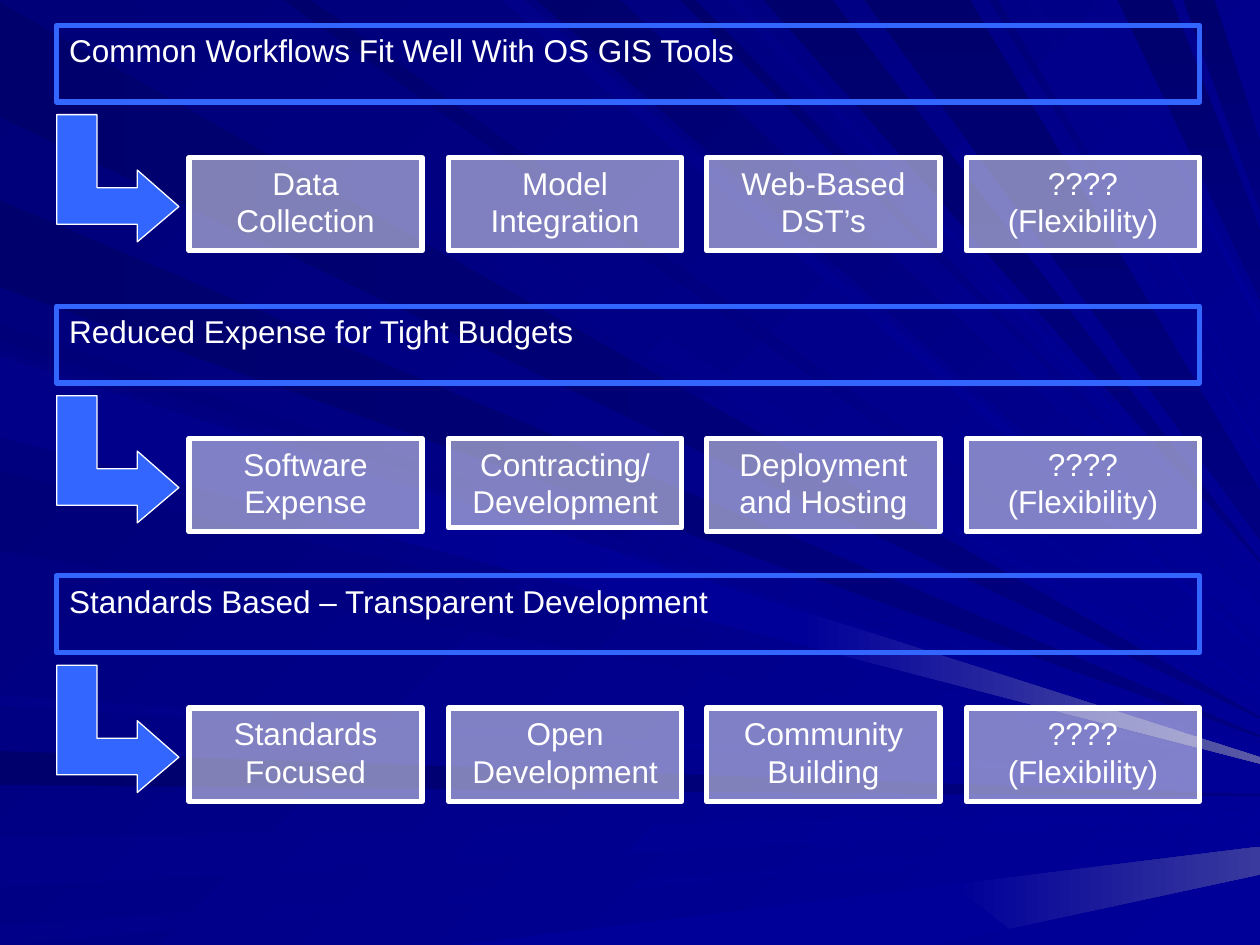
import pptx
import pptx.dml.color
import pptx.enum.shapes
import pptx.enum.text
import pptx.oxml.ns
import pptx.util
from lxml import etree

RGBColor = pptx.dml.color.RGBColor
PX = 9144  # EMU per px, 100 px to the inch
WIDTH, HEIGHT = 1000, 750

WHITE = RGBColor.from_string("FFFFFF")
BLUE = RGBColor.from_string("3366FF")
NIGHT = RGBColor.from_string("00006D")
DUSK = RGBColor.from_string("000078")
DAWN = RGBColor.from_string("000088")
DEEP = RGBColor.from_string("000080")
BRIGHT = RGBColor.from_string("000099")
HAZE = RGBColor.from_string("39399E")
GLOW = RGBColor.from_string("5A5AA6")

# Rays: edge they start on, span on that edge, height and spread at the right side, colours
RAYS = [
    ("left", 2, 93, 570, 1, NIGHT, DEEP),
    ("top", 26, 101, 563, 1, DUSK, BRIGHT),
    ("left", 596, 623, 632, 1, NIGHT, DEEP),
    ("left", 665, 704, 647, 8, DAWN, BRIGHT),
    ("left", 735, 750, 662, 1, DAWN, BRIGHT),
    ("left", 258, 270, 589, 1, DUSK, BRIGHT),
    ("left", 159, 228, 585, 1, NIGHT, DEEP),
    ("top", 398, 416, 518, 6, DAWN, BRIGHT),
    ("top", 426, 492, 493, 28, NIGHT, BRIGHT),
    ("top", 540, 552, 463, 1, NIGHT, BRIGHT),
    ("top", 606, 661, 446, 1, NIGHT, DEEP),
    ("top", 887, 930, 210, 54, NIGHT, DEEP),
    ("top", 939, 964, 140, 53, NIGHT, DEEP),
    ("left", 278, 342, 599, 6, DEEP, BRIGHT),
    ("left", 374, 437, 606, 1, DUSK, BRIGHT),
    ("left", 552, 560, 622, 2, DAWN, BRIGHT),
    ("top", 225, 247, 550, 5, NIGHT, BRIGHT),
    ("top", 577, 588, 454, 1, DAWN, BRIGHT),
    ("top", 686, 770, 409, 38, NIGHT, DEEP),
    ("top", 785, 792, 357, 6, DUSK, BRIGHT),
    ("top", 815, 824, 336, 1, DAWN, BRIGHT),
    ("top", 865, 872, 254, 9, DAWN, BRIGHT),
]
# Light patches at the lower right, and the ray that leads to one of them
PATCHES = [
    (BRIGHT, BRIGHT, [(742, 750), (801, 737), (756, 702), (364, 750)]),
    (BRIGHT, HAZE, [(1000, 694), (1000, 672), (756, 702), (801, 737)]),
    (DAWN, BRIGHT, [(0, 283), (0, 347), (633, 511), (637, 485)]),
    (BRIGHT, GLOW, [(1000, 601), (637, 485), (633, 511), (1000, 606)]),
]

# Sections: top, heading, boxes
FLEXIBLE = "????\n(Flexibility)"
SHORT_BOX = "Contracting/ Development"
SECTIONS = [
    (20, "Common Workflows Fit Well With OS GIS Tools",
     ["Data Collection", "Model Integration", "Web-Based DST’s", FLEXIBLE]),
    (243, "Reduced Expense for Tight Budgets",
     ["Software Expense", SHORT_BOX, "Deployment and Hosting", FLEXIBLE]),
    (457, "Standards Based – Transparent Development",
     ["Standards Focused", "Open Development", "Community Building", FLEXIBLE]),
]
ARROW = [(142, 144), (109, 115), (109, 129), (77, 129), (77, 71),
         (45, 71), (45, 158), (109, 158), (109, 172)]


def write(tf, text, size=18, font="Arial", color=WHITE, align="LEFT"):
    tf.word_wrap = True
    tf.vertical_anchor = pptx.enum.text.MSO_ANCHOR.TOP
    for i, line in enumerate(text.split("\n")):
        p = tf.add_paragraph() if i else tf.paragraphs[0]
        p.alignment = pptx.enum.text.PP_ALIGN[align]
        r = p.add_run()
        r.text = line
        r.font.size = pptx.util.Pt(size)
        r.font.name = font
        r.font.color.rgb = color


def blend(fill, start, end, angle):
    fill.gradient()
    fill.gradient_angle = -angle % 360
    for stop, color in zip(fill.gradient_stops, (start, end)):
        stop.color.rgb = color


class Deck:
    def __init__(self):
        self.prs = pptx.Presentation()
        self.prs.slide_width, self.prs.slide_height = WIDTH * PX, HEIGHT * PX
        self.s = self.prs.slides.add_slide(self.prs.slide_layouts[6])

    def polygon(self, points):
        builder = self.s.shapes.build_freeform(*points[0], scale=PX)
        builder.add_line_segments(points[1:], close=True)
        sp = builder.convert_to_shape()
        sp.shadow.inherit = False
        return sp

    def patch(self, start, end, points, angle=0):
        sp = self.polygon(points)
        sp.line.fill.background()
        blend(sp.fill, start, end, angle)

    def ray(self, edge, first, last, y, spread, start, end):
        # A left span runs down and a top span runs right, so the far side flips
        low, high = y + spread // 2, y - (spread + 1) // 2
        if edge == "left":
            near = [(0, last), (0, first)]
        else:
            near = [(first, 0), (last, 0)]
        flat = 0 if edge == "left" else 90
        self.patch(start, end, near + [(WIDTH, high), (WIDTH, low)],
                   angle=flat if end == DEEP else 45)

    def arrow(self, top):
        sp = self.polygon([(x, y + top) for x, y in ARROW])
        sp.fill.solid()
        sp.fill.fore_color.rgb = BLUE
        sp.line.color.rgb = WHITE
        sp.line.width = pptx.util.Pt(0.75)

    def frame(self, x, y, w, h, text, line, align="LEFT"):
        sp = self.s.shapes.add_shape(pptx.enum.shapes.MSO_SHAPE.RECTANGLE,
                                     x * PX, y * PX, w * PX, h * PX)
        sp.shadow.inherit = False
        sp.fill.background()
        sp.line.color.rgb = line
        sp.line.width = pptx.util.Pt(3)
        write(sp.text_frame, text, align=align)
        return sp

    def box(self, x, y, w, h, text):
        sp = self.frame(x, y, w, h, text, WHITE, align="CENTER")
        sp.fill.solid()
        sp.fill.fore_color.rgb = WHITE
        qn = pptx.oxml.ns.qn
        color = next(sp.element.spPr.iter(qn("a:srgbClr")))
        etree.SubElement(color, qn("a:alpha"), val="50000")


def main():
    deck = Deck()

    # Background
    blend(deck.s.background.fill, DUSK, BRIGHT, 45)
    for ray in RAYS:
        deck.ray(*ray)
    for patch in PATCHES:
        deck.patch(*patch)

    # Heading, four boxes and arrow per section
    for top, heading, labels in SECTIONS:
        deck.frame(45, top, 907, 61, heading, BLUE)
        for i, label in enumerate(labels):
            height = 71 if label == SHORT_BOX else 74
            deck.box(round(150 + i * 617 / 3), top + 105, 185, height, label)
        deck.arrow(top)

    deck.prs.save("out.pptx")


if __name__ == "__main__":
    main()
